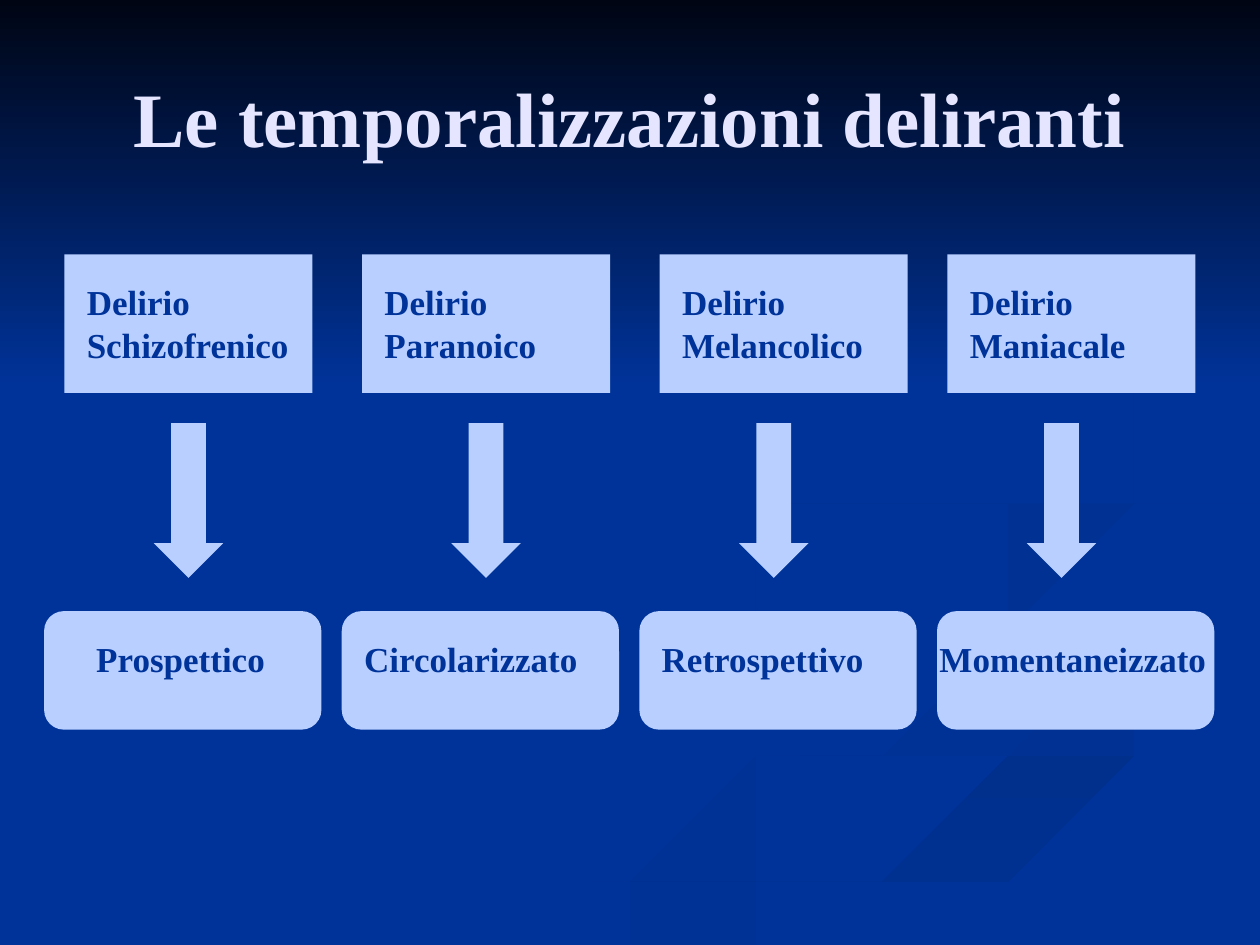
"""Build the slide on the four delusional temporalizations."""
from dataclasses import dataclass

from pptx import Presentation
from pptx import util as u
from pptx.dml.color import RGBColor
from pptx.enum import shapes, text

NAVY = RGBColor(0x00, 0x33, 0x99)
MIDNIGHT = RGBColor(0x00, 0x05, 0x14)
PALE_BLUE = RGBColor(0xB8, 0xCF, 0xFF)
LAVENDER = RGBColor(0xE5, 0xE5, 0xFF)
SHADE = RGBColor(0x00, 0x31, 0x93)
DEEP_SHADE = RGBColor(0x00, 0x2F, 0x8C)
FONT = "Times New Roman"
UNIT = u.Cm(2.54)
PAGE_WIDTH, PAGE_HEIGHT = 10, 7.5
CARD_LEFT, CARD_STEP = 0.89, 6.0
CURVE_STEPS = 5
TENSION = 0.4


@dataclass(frozen=True)
class Ribbon:
    start: RGBColor
    end: RGBColor
    angle: int
    points: tuple


@dataclass(frozen=True)
class Column:
    delusion: str
    box_left: float
    label_width: float
    arrow_offset: float
    outcome: str
    outcome_offset: float
    outcome_width: float


RIBBONS = (
    Ribbon(NAVY, SHADE, 0, (
        (7.8, 5.53), (6.6, 5.13), (5.75, 4.6), (5.85, 4.87), (7.1, 5.3), (7.85, 5.65), (6.5, 6.2),
        (4.6, 6.75), (3, 7.5), (3.6, 7.5), (5.6, 6.65), (7.6, 6.12), (8, 5.8))),
    Ribbon(NAVY, SHADE, 315, (
        (9.43, 5.7), (8.7, 5.3), (7.6, 5), (7.24, 4.64), (7.8, 5.18), (9, 5.57), (8.94, 6.05))),
    Ribbon(DEEP_SHADE, NAVY, 270, (
        (5, 7.5), (5.7, 7.5), (7.5, 6.72), (10, 6.1), (10, 5.8), (7.6, 6.47))),
    Ribbon(SHADE, NAVY, 315, (
        (7.8, 4.6), (8.26, 4.96), (8.1, 4.65), (10, 4.2), (10, 4), (8.2, 4.34))),
    Ribbon(DEEP_SHADE, NAVY, 315, (
        (6.8, 4.3), (8.4, 3.96), (8.94, 3.4), (8.5, 2.8), (7.62, 2.33), (8.6, 2.9), (8.85, 3.5),
        (7.6, 4), (6, 4.35), (5.8, 4.75), (6.22, 5), (5.95, 4.65))),
)

COLUMNS = (
    Column("Delirio Schizofrenico", 1.3, 4.8, 1.8, "Prospettico", 0.8, 4.2),
    Column("Delirio Paranoico", 7.3, 4, 1.8, "Circolarizzato", 0.2, 5),
    Column("Delirio Melancolico", 13.3, 4.4, 1.6, "Retrospettivo", 0.2, 5.2),
    Column("Delirio Maniacale", 19.1, 3.8, 1.6, "Momentaneizzato", -0.2, 6),
)


def smooth_outline(points: tuple) -> list:
    """Return a closed curve through the points, kept within the page."""
    outline = []
    for index, current in enumerate(points):
        before = points[index - 1]
        following = points[(index + 1) % len(points)]
        after = points[(index + 2) % len(points)]
        for step in range(CURVE_STEPS):
            t = step / CURVE_STEPS
            blend = t * t * (3 - 2 * t)
            leave, arrive = t * (1 - t) ** 2, t * t * (t - 1)
            x, y = (
                a + (b - a) * blend + TENSION * ((b - p) * leave + (n - a) * arrive)
                for p, a, b, n in zip(before, current, following, after)
            )
            outline.append((min(x, PAGE_WIDTH), min(y, PAGE_HEIGHT)))
    return outline


def fill_gradient(shape, start: RGBColor, end: RGBColor, angle: int) -> None:
    """Give a shape a two-colour gradient without line or shadow."""
    shape.shadow.inherit = False
    shape.line.fill.background()
    shape.fill.gradient()
    shape.fill.gradient_angle = angle
    for stop, colour in zip(shape.fill.gradient_stops, (start, end)):
        stop.color.rgb = colour


def draw_ribbon(slide, ribbon: Ribbon) -> None:
    """Draw one curved background ribbon."""
    first, *rest = smooth_outline(ribbon.points)
    builder = slide.shapes.build_freeform(*first, scale=UNIT)
    builder.add_line_segments(rest, close=True)
    fill_gradient(builder.convert_to_shape(), ribbon.start, ribbon.end, ribbon.angle)


def add_block(slide, kind, left: float, top: float, width: float, height: float):
    """Add one pale blue preset shape."""
    shape = slide.shapes.add_shape(kind, u.Cm(left), u.Cm(top), u.Cm(width), u.Cm(height))
    shape.shadow.inherit = False
    shape.fill.solid()
    shape.fill.fore_color.rgb = PALE_BLUE
    shape.line.fill.background()
    return shape


def add_bold_run(paragraph, wording: str, size: int, colour: RGBColor) -> None:
    """Add one bold run to a paragraph."""
    run = paragraph.add_run()
    run.text = wording
    run.font.name = FONT
    run.font.size = u.Pt(size)
    run.font.bold = True
    run.font.color.rgb = colour


def draw_label(slide, wording: str, left: float, top: float, width: float, height: float) -> None:
    """Draw one wrapped navy label."""
    box = slide.shapes.add_textbox(u.Cm(left), u.Cm(top), u.Cm(width), u.Cm(height))
    box.text_frame.word_wrap = True
    box.text_frame.auto_size = text.MSO_AUTO_SIZE.SHAPE_TO_FIT_TEXT
    add_bold_run(box.text_frame.paragraphs[0], wording, 20, NAVY)


def draw_column(slide, column: Column, card_left: float) -> None:
    """Draw a delusion, its arrow and its outcome."""
    kinds = shapes.MSO_SHAPE
    left = column.box_left
    add_block(slide, kinds.RECTANGLE, left, 5.13, 5, 2.79)
    add_block(slide, kinds.DOWN_ARROW, left + column.arrow_offset, 8.53, 1.4, 3.12)
    add_block(slide, kinds.ROUNDED_RECTANGLE, card_left, 12.32, 5.59, 2.39)
    draw_label(slide, column.delusion, left + 0.2, 5.54, column.label_width, 1.96)
    draw_label(slide, column.outcome, card_left + column.outcome_offset, 12.73,
               column.outcome_width, 1.12)


def place_title(slide, wording: str) -> None:
    """Format the title and bring it in front of the background."""
    title = slide.shapes.title
    title.left, title.top = u.Cm(1.27), u.Cm(0.76)
    title.width, title.height = u.Cm(22.86), u.Cm(3.18)
    title.text_frame.vertical_anchor = text.MSO_ANCHOR.MIDDLE
    paragraph = title.text_frame.paragraphs[0]
    paragraph.alignment = text.PP_ALIGN.CENTER
    add_bold_run(paragraph, wording, 44, LAVENDER)
    title.element.getparent().append(title.element)


def main() -> None:
    """Build and save the presentation."""
    presentation = Presentation()
    presentation.slide_width, presentation.slide_height = u.Cm(25.4), u.Cm(19.05)
    slide = presentation.slides.add_slide(presentation.slide_layouts[5])
    slide.background.fill.solid()
    slide.background.fill.fore_color.rgb = NAVY
    for ribbon in RIBBONS:
        draw_ribbon(slide, ribbon)
    sky = add_block(slide, shapes.MSO_SHAPE.RECTANGLE, 0, 0, 25.4, 7.82)
    fill_gradient(sky, MIDNIGHT, NAVY, 270)
    place_title(slide, "Le temporalizzazioni deliranti")
    for index, column in enumerate(COLUMNS):
        draw_column(slide, column, CARD_LEFT + index * CARD_STEP)
    presentation.save("out.pptx")


if __name__ == "__main__":
    main()
